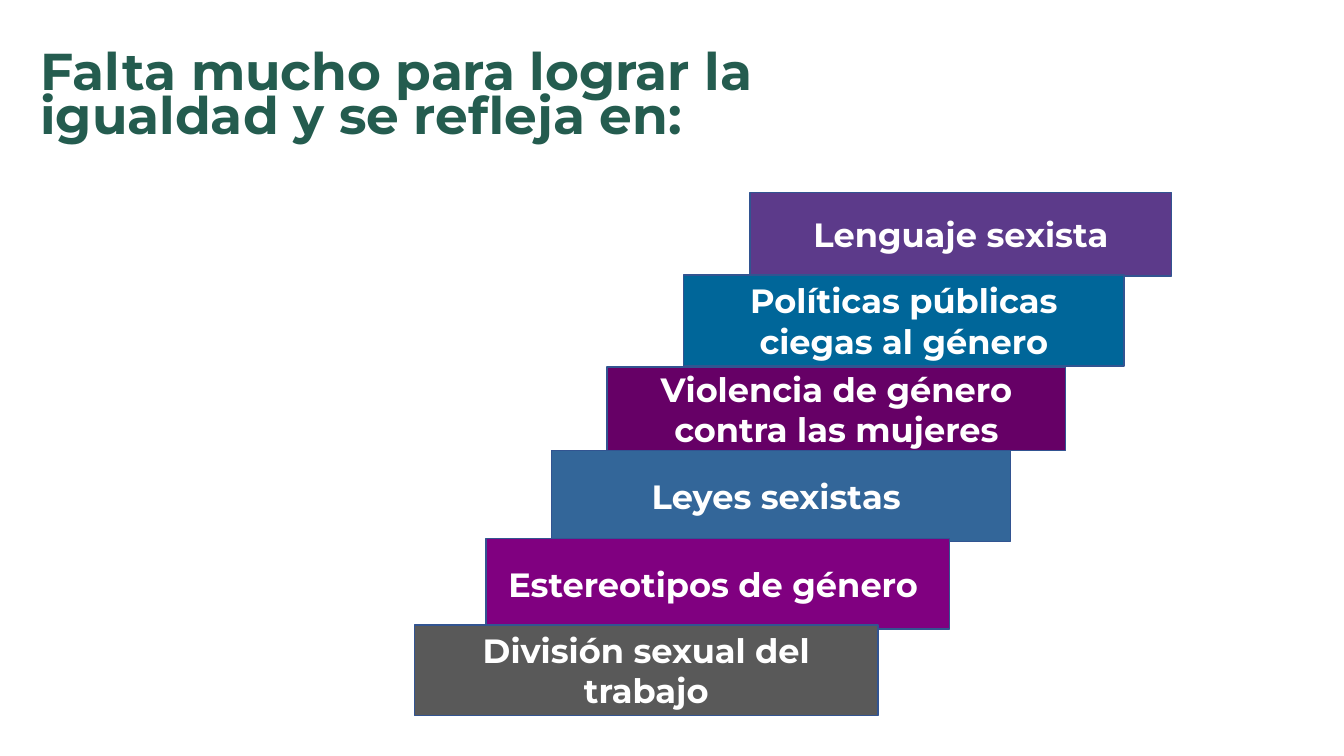
from dataclasses import dataclass

from pptx import Presentation
from pptx.dml.color import RGBColor
from pptx.enum.shapes import MSO_SHAPE as Shape
from pptx.enum.text import MSO_ANCHOR as Anchor, MSO_AUTO_SIZE as Fit, PP_ALIGN as Align
from pptx.util import Inches, Pt


@dataclass(frozen=True)
class Theme:
    font: str = "Montserrat"
    title: str = "245C4F"
    text: str = "FFFFFF"
    edge: str = "325491"
    title_size: int = 37
    step_size: int = 24


THEME = Theme()

# Text, fill, left, top, width, height; from the top step down
STEPS = [
    ("Lenguaje sexista", "5C3A8A", 7.44, 1.91, 4.18, 0.83),
    ("Políticas públicas ciegas al género", "006699", 6.78, 2.73, 4.37, 0.9),
    ("Violencia de género contra las mujeres", "660066", 6.02, 3.64, 4.55, 0.83),
    ("Leyes sexistas ", "336699", 5.47, 4.47, 4.55, 0.9),
    ("Estereotipos de género ", "800080", 4.82, 5.34, 4.6, 0.9),
    ("División sexual del trabajo", "595959", 4.11, 6.2, 4.6, 0.9),
]


def write(frame, text, *, size, color, align, anchor, spacing=1.0):
    frame.word_wrap = True
    frame.auto_size = Fit.NONE
    frame.vertical_anchor = anchor
    frame.margin_left = frame.margin_right = Inches(0.1)
    frame.margin_top = frame.margin_bottom = Inches(0.05)
    para = frame.paragraphs[0]
    para.alignment = align
    para.line_spacing = spacing
    run = para.add_run()
    run.text = text
    run.font.name = THEME.font
    run.font.size = Pt(size)
    run.font.bold = True
    run.font.color.rgb = RGBColor.from_string(color)


def add_title(slide, text):
    title = slide.shapes.title
    title.left, title.top = Inches(0.3), Inches(0.44)
    title.width, title.height = Inches(7.35), Inches(1.03)
    write(title.text_frame, text, size=THEME.title_size, color=THEME.title,
          align=Align.LEFT, anchor=Anchor.BOTTOM, spacing=0.7)


def add_step(slide, text, fill, *box):
    step = slide.shapes.add_shape(Shape.RECTANGLE, *map(Inches, box))
    step.shadow.inherit = False
    step.fill.solid()
    step.fill.fore_color.rgb = RGBColor.from_string(fill)
    step.line.color.rgb = RGBColor.from_string(THEME.edge)
    step.line.width = Pt(1)
    write(step.text_frame, text, size=THEME.step_size, color=THEME.text,
          align=Align.CENTER, anchor=Anchor.MIDDLE)


def main():
    deck = Presentation()
    deck.slide_width, deck.slide_height = Inches(13.33), Inches(7.5)
    slide = deck.slides.add_slide(deck.slide_layouts[5])
    add_title(slide, "Falta mucho\u00a0para lograr la igualdad y se refleja en:".replace("\u00a0", " "))
    for step in STEPS:
        add_step(slide, *step)
    deck.save("out.pptx")


if __name__ == "__main__":
    main()
